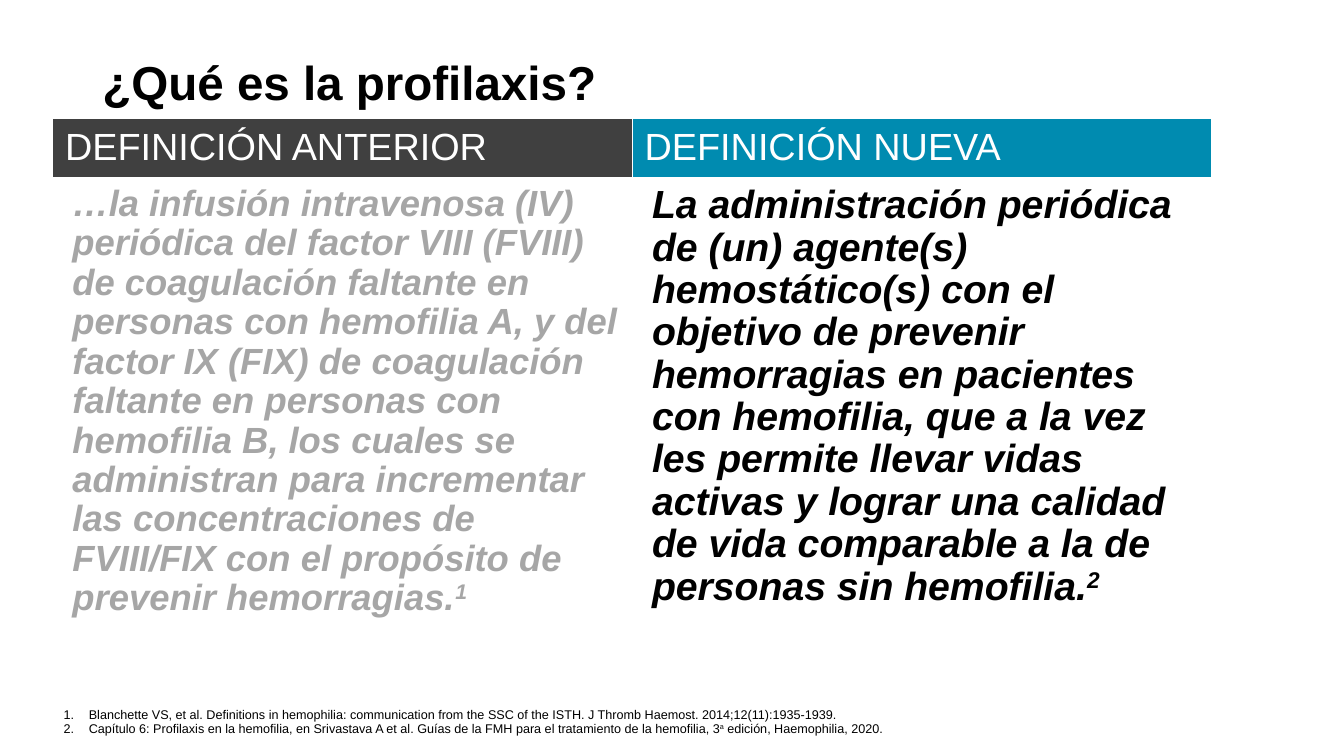
from dataclasses import dataclass

from lxml.etree import SubElement
from pptx import Presentation
from pptx.dml.color import RGBColor
from pptx.enum.text import MSO_ANCHOR, MSO_AUTO_SIZE, PP_ALIGN
from pptx.oxml import parse_xml
from pptx.oxml.ns import nsdecls, qn
from pptx.util import Pt

PX = 9525  # EMU in one px, 96 px to the inch


@dataclass(frozen=True)
class Theme:
    font: str = "Arial"
    ink: str = "000000"
    paper: str = "FFFFFF"
    muted: str = "A6A6A6"
    dark: str = "404040"
    teal: str = "008BB0"
    title_size: int = 34
    header_size: int = 27
    old_size: int = 26
    new_size: int = 28
    reference_size: int = 9


class SlideBuilder:
    def __init__(self, page, theme):
        self.page = page
        self.theme = theme

    def place(self, shape, left, top, width, height):
        shape.left, shape.top = left * PX, top * PX
        shape.width, shape.height = width * PX, height * PX

    def add_spans(self, para, parts, size, color, bold=False, italic=False):
        """Fill a paragraph; every second part is superscript."""
        for index, part in enumerate(parts):
            span = para.add_run()
            span.text = part
            font = span.font
            font.name, font.size = self.theme.font, Pt(size)
            font.bold, font.italic = bold, italic
            font.color.rgb = RGBColor.from_string(color)
            if index % 2:
                font._element.set("baseline", "30000")

    def title(self, text, *area):
        shape = self.page.shapes.title
        self.place(shape, *area)
        frame = shape.text_frame
        frame.auto_size = MSO_AUTO_SIZE.NONE
        frame.vertical_anchor = MSO_ANCHOR.MIDDLE
        para = frame.paragraphs[0]
        para.alignment, para.line_spacing = PP_ALIGN.LEFT, 0.9
        self.add_spans(para, [text], self.theme.title_size, self.theme.ink, bold=True)

    def numbered_list(self, items, *area):
        shape = self.page.placeholders[1]
        self.place(shape, *area)
        frame = shape.text_frame
        frame.auto_size = MSO_AUTO_SIZE.NONE
        frame.vertical_anchor = MSO_ANCHOR.BOTTOM
        frame.margin_bottom = 0
        for index, parts in enumerate(items):
            para = frame.add_paragraph() if index else frame.paragraphs[0]
            para.line_spacing, para.space_before = 0.9, Pt(0)
            properties = para._p.get_or_add_pPr()
            properties.set("marL", str(24 * PX))
            properties.set("indent", str(-24 * PX))
            SubElement(properties, qn("a:buFont"), typeface="+mj-lt")
            SubElement(properties, qn("a:buAutoNum"), type="arabicPeriod")
            self.add_spans(para, parts, self.theme.reference_size, self.theme.ink)

    def table(self, columns, rows, left, top, width):
        frame = self.page.shapes.add_table(
            len(rows), columns, left * PX, top * PX, width * PX, sum(rows) * PX)
        table = frame.table
        table.horz_banding = False
        for row, height in zip(table.rows, rows):
            row.height = height * PX
        return table

    def cell(self, cell, parts, size, color, fill, inset, spacing=1.0, **style):
        cell.margin_left, cell.margin_right = inset * PX, 12 * PX
        cell.margin_top = cell.margin_bottom = 7 * PX
        cell.fill.solid()
        cell.fill.fore_color.rgb = RGBColor.from_string(fill)
        para = cell.text_frame.paragraphs[0]
        para.line_spacing = spacing
        self.add_spans(para, parts, size, color, **style)
        properties = cell._tc.get_or_add_tcPr()
        for index, side in enumerate("LRTB"):
            properties.insert(index, parse_xml(
                f'<a:ln{side} {nsdecls("a")} w="12700"><a:solidFill>'
                f'<a:srgbClr val="{self.theme.paper}"/></a:solidFill></a:ln{side}>'))


def main():
    theme = Theme()
    deck = Presentation()
    deck.slide_width, deck.slide_height = 1280 * PX, 720 * PX
    page = deck.slides.add_slide(deck.slide_layouts[1])
    builder = SlideBuilder(page, theme)

    # Title
    builder.title("¿Qué es la profilaxis?", 88, 24, 1104, 114)

    # Old and new definitions: header, header fill, text, size, colour
    definitions = [
        ("DEFINICIÓN ANTERIOR", theme.dark,
         ["…la infusión intravenosa (IV) periódica del factor VIII (FVIII) de "
          "coagulación faltante en personas con hemofilia A, y del factor IX (FIX) "
          "de coagulación faltante en personas con hemofilia B, los cuales se "
          "administran para incrementar las concentraciones de FVIII/FIX con el "
          "propósito de prevenir hemorragias.", "1"],
         theme.old_size, theme.muted),
        ("DEFINICIÓN NUEVA", theme.teal,
         ["La administración periódica de (un) agente(s) hemostático(s) con el "
          "objetivo de prevenir hemorragias en pacientes con hemofilia, que a la vez "
          "les permite llevar vidas activas y lograr una calidad de vida comparable "
          "a la de personas sin hemofilia.", "2"],
         theme.new_size, theme.ink),
    ]
    table = builder.table(len(definitions), [56, 418], 50, 113, 1104)
    for column, (header, fill, parts, size, color) in enumerate(definitions):
        builder.cell(table.cell(0, column), [header], theme.header_size,
                     theme.paper, fill, inset=12)
        builder.cell(table.cell(1, column), parts, size, color, theme.paper,
                     inset=19, spacing=0.97, bold=True, italic=True)

    # References
    builder.numbered_list([
        ["Blanchette VS, et al. Definitions in hemophilia: communication from the "
         "SSC of the ISTH. J Thromb Haemost. 2014;12(11):1935-1939."],
        ["Capítulo 6: Profilaxis en la hemofilia, en Srivastava A et al. Guías de la "
         "FMH para el tratamiento de la hemofilia, 3", "a",
         " edición, Haemophilia, 2020."],
    ], 51, 665, 984, 36)

    deck.save("out.pptx")


if __name__ == "__main__":
    main()
